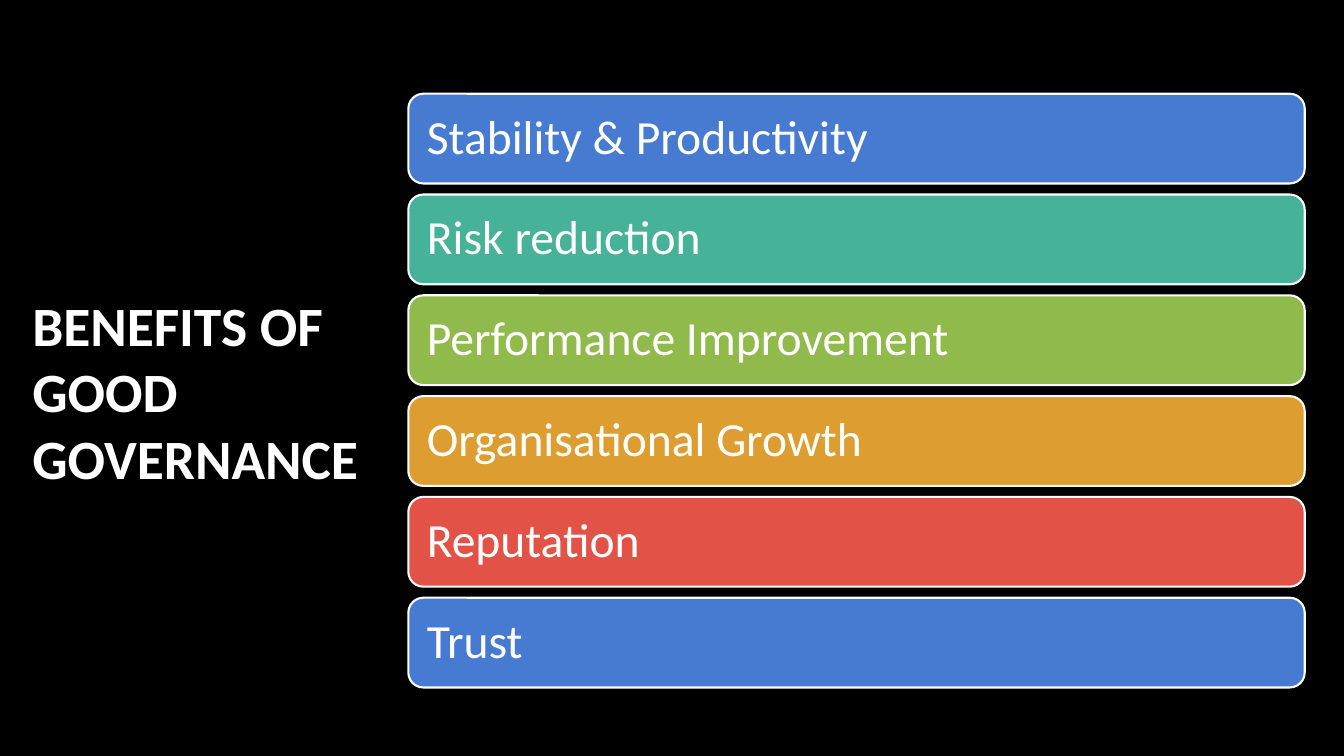
from pptx import Presentation
from pptx import util as u
from pptx.dml.color import RGBColor
from pptx.enum import shapes, text

PX = 9144  # EMU per px, 100 px to the inch
COLOURS = {
    "background": "000000",
    "white": "FFFFFF",
    "blue": "477BD1",
    "teal": "46B298",
    "green": "90BA4C",
    "amber": "DD9D31",
    "red": "E25247",
}
BENEFITS = [
    ("Stability & Productivity", "blue"),
    ("Risk reduction", "teal"),
    ("Performance Improvement", "green"),
    ("Organisational Growth", "amber"),
    ("Reputation", "red"),
    ("Trust", "blue"),
]
BAR_LEFT, BAR_TOP, BAR_WIDTH, BAR_HEIGHT, BAR_STEP = 405, 93, 889, 89, 100


def px(*lengths):
    return [u.Emu(length * PX) for length in lengths]


def colour(name):
    return RGBColor.from_string(COLOURS[name])


def write(shape, words, size, bold=False, inset=(10, 5), spacing=1.0):
    """Fill a shape with one left-aligned, vertically centred paragraph."""
    frame = shape.text_frame
    frame.word_wrap = True
    frame.auto_size = text.MSO_AUTO_SIZE.NONE
    frame.vertical_anchor = text.MSO_ANCHOR.MIDDLE
    frame.margin_left, frame.margin_top = px(*inset)
    frame.margin_right, frame.margin_bottom = px(*inset)
    paragraph = frame.paragraphs[0]
    paragraph.text = words
    paragraph.alignment = text.PP_ALIGN.LEFT
    paragraph.line_spacing = spacing
    for run in paragraph.runs:
        run.font.name = "Calibri"
        run.font.size = u.Pt(size)
        run.font.bold = bold
        run.font.color.rgb = colour("white")


def add_title(slide, words):
    title = slide.shapes.title
    title.left, title.top, title.width, title.height = px(22, 246, 347, 283)
    write(title, words, 39.6, bold=True)


def add_benefit(slide, row, words, fill):
    bar = slide.shapes.add_shape(
        shapes.MSO_SHAPE.ROUNDED_RECTANGLE,
        *px(BAR_LEFT, BAR_TOP + row * BAR_STEP, BAR_WIDTH, BAR_HEIGHT))
    bar.shadow.inherit = False
    bar.fill.solid()
    bar.fill.fore_color.rgb = colour(fill)
    bar.line.color.rgb = colour("white")
    bar.line.width = u.Pt(1.5)
    write(bar, words, 34, inset=(14, 14), spacing=0.9)


def main():
    deck = Presentation()
    deck.slide_width, deck.slide_height = px(1333, 750)
    slide = deck.slides.add_slide(deck.slide_layouts.get_by_name("Title Only"))
    slide.background.fill.solid()
    slide.background.fill.fore_color.rgb = colour("background")
    add_title(slide, "BENEFITS OF \vGOOD \vGOVERNANCE")
    for row, (words, fill) in enumerate(BENEFITS):
        add_benefit(slide, row, words, fill)
    deck.save("out.pptx")


if __name__ == "__main__":
    main()
